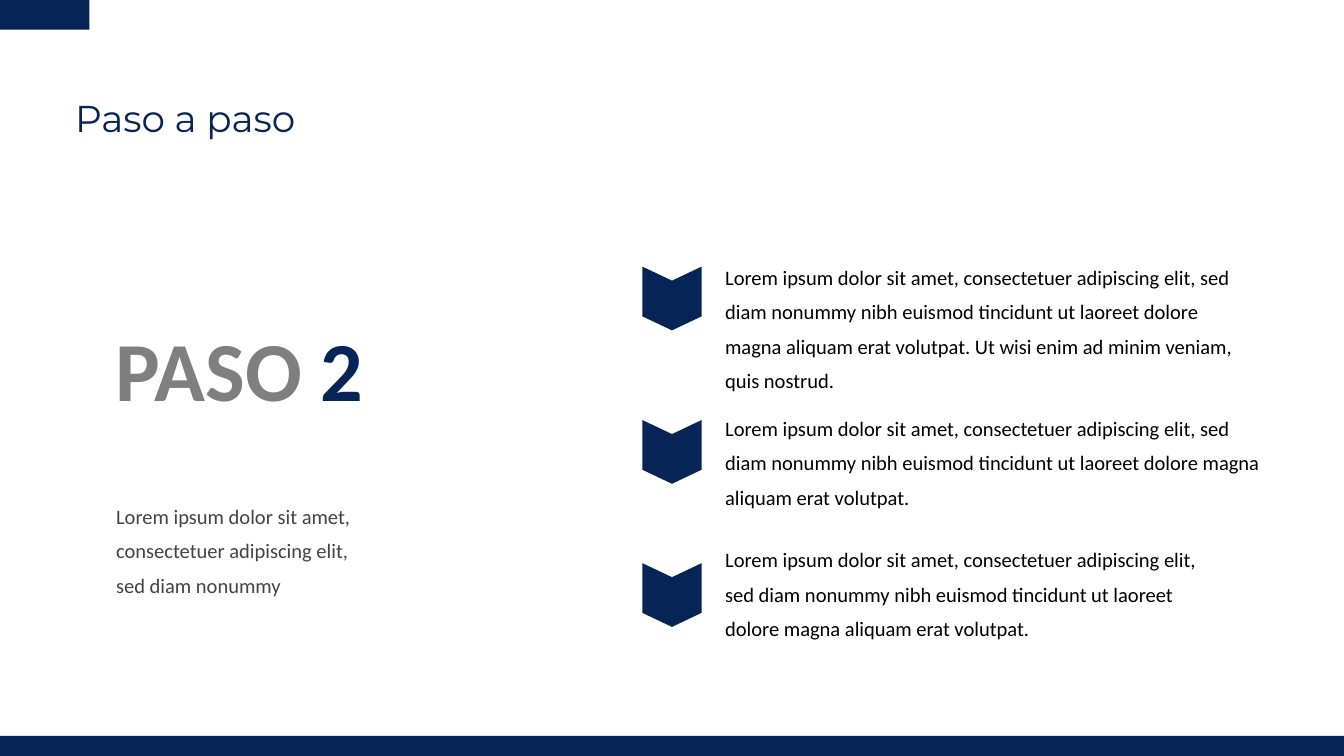
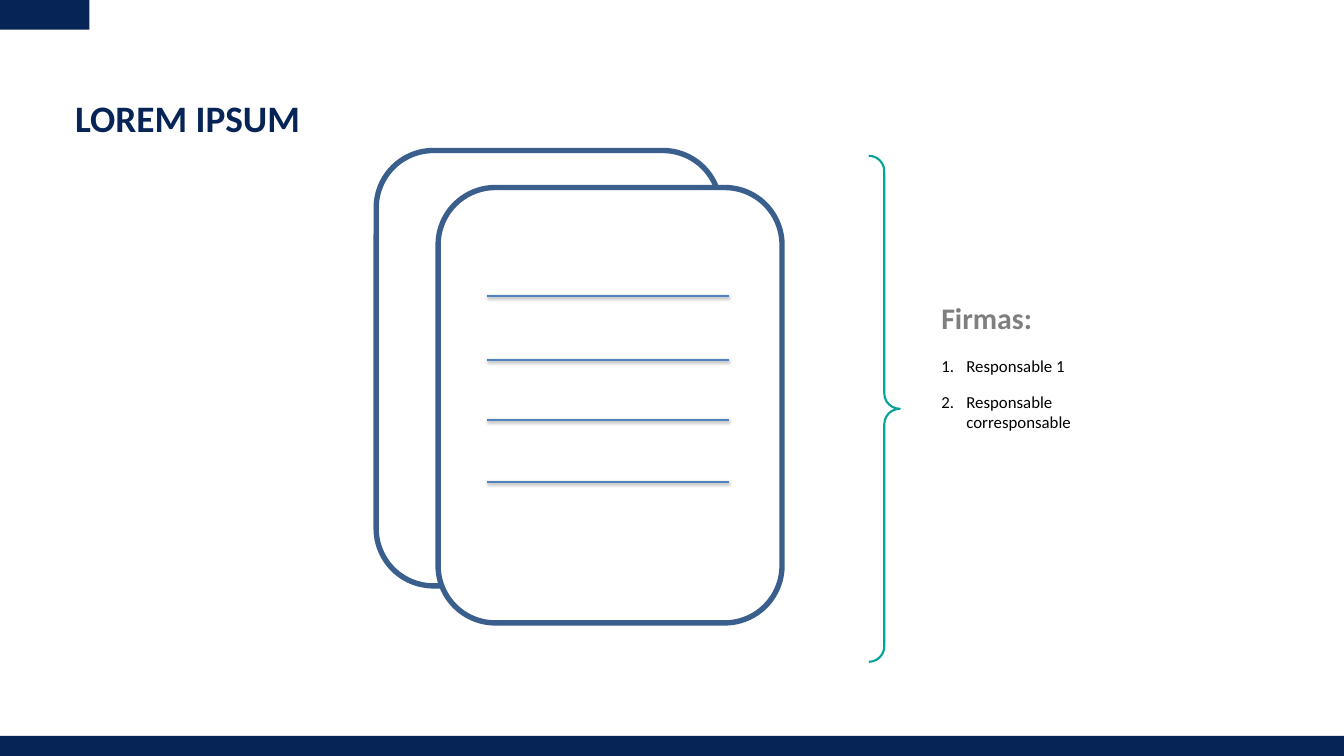
"""Build two slides of a process template: a step in detail and a signature sheet."""

from dataclasses import dataclass
from typing import Any, NamedTuple, Optional

from lxml.etree import SubElement
from pptx import Presentation
from pptx.dml.color import RGBColor
from pptx.enum.shapes import MSO_CONNECTOR, MSO_SHAPE
from pptx.enum.text import MSO_AUTO_SIZE, PP_ALIGN
from pptx.oxml.ns import qn
from pptx.util import Cm, Pt


@dataclass(frozen=True)
class Theme:
    navy: RGBColor = RGBColor(0x07, 0x24, 0x56)
    steel: RGBColor = RGBColor(0x3A, 0x5F, 0x8C)
    blue: RGBColor = RGBColor(0x4F, 0x81, 0xBD)
    teal: RGBColor = RGBColor(0x03, 0xA2, 0x9B)
    grey: RGBColor = RGBColor(0x7F, 0x7F, 0x7F)
    charcoal: RGBColor = RGBColor(0x43, 0x43, 0x43)
    black: RGBColor = RGBColor(0, 0, 0)
    white: RGBColor = RGBColor(0xFF, 0xFF, 0xFF)
    body_font: str = "Calibri"
    title_font: str = "Montserrat"
    step_size: int = 90
    title_size: int = 40
    heading_size: int = 32
    body_size: int = 22
    list_size: int = 18


THEME = Theme()
SLIDE_WIDTH, SLIDE_HEIGHT = 50.8, 28.58
BAND_TOP = 27.82


class Box(NamedTuple):
    left: float
    top: float
    width: float
    height: float

    def lengths(self) -> list[Cm]:
        return [Cm(value) for value in self]


@dataclass(frozen=True)
class Words:
    text: str
    size: int
    color: RGBColor
    bold: bool = False
    font: str = THEME.body_font


@dataclass(frozen=True)
class Step:
    chevron_top: float
    box: Box
    text: str


@dataclass(frozen=True)
class Signer:
    role: str
    space_before: int


LOREM = "Lorem ipsum dolor sit amet, consectetuer adipiscing elit, sed diam nonummy"
LOREM_LONG = f"{LOREM} nibh euismod tincidunt ut laoreet dolore magna aliquam erat volutpat."
STEPS = [
    Step(10.08, Box(27.41, 9.63, 19.63, 4.9), f"{LOREM_LONG} Ut wisi enim ad minim veniam, quis nostrud."),
    Step(15.88, Box(27.41, 15.34, 20.52, 3.58), LOREM_LONG),
    Step(21.29, Box(27.41, 20.32, 18.77, 3.58), LOREM_LONG),
]
SIGNERS = [Signer("Responsable 1", 22), Signer("Responsable corresponsable", 17)]
SHEETS = [(Box(14.22, 5.69, 13, 16.46), None), (Box(16.56, 7.09, 13, 16.46), THEME.white)]
RULE_TOPS = [11.18, 13.61, 15.88, 18.21]
RULE_LEFT, RULE_RIGHT = 18.42, 27.56
CHEVRON_LEFT, CHEVRON_WIDTH, CHEVRON_HEIGHT, CHEVRON_NOTCH = 24.28, 2.24, 2.41, 0.53


def apply_format(target: Any, values: dict[str, Any]) -> None:
    """Set every format value on the target."""
    for attribute, value in values.items():
        setattr(target, attribute, value)


def paint(shape: Any, fill: Optional[RGBColor] = None, line: Optional[RGBColor] = None, width: float = 0) -> None:
    """Give a shape its fill and outline, without shadow."""
    shape.shadow.inherit = False
    if fill is None:
        shape.fill.background()
    else:
        shape.fill.solid()
        shape.fill.fore_color.rgb = fill
    if line is None:
        shape.line.fill.background()
    else:
        shape.line.color.rgb = line
        shape.line.width = Pt(width)


def add_preset(slide: Any, kind: MSO_SHAPE, box: Box, **look: Any) -> Any:
    """Draw a preset shape with the given look."""
    shape = slide.shapes.add_shape(kind, *box.lengths())
    paint(shape, **look)
    return shape


def add_frame(slide: Any, box: Box, side: float = 0, edge: float = 0) -> Any:
    """Add a wrapping text frame that grows with its text."""
    frame = slide.shapes.add_textbox(*box.lengths()).text_frame
    apply_format(frame, {
        "word_wrap": True, "auto_size": MSO_AUTO_SIZE.SHAPE_TO_FIT_TEXT,
        "margin_left": Cm(side), "margin_right": Cm(side),
        "margin_top": Cm(edge), "margin_bottom": Cm(edge),
    })
    return frame


def write(paragraph: Any, *parts: Words) -> None:
    """Write the parts as runs of one paragraph."""
    for words in parts:
        run = paragraph.add_run()
        run.text = words.text
        apply_format(run.font, {"name": words.font, "size": Pt(words.size), "bold": words.bold})
        run.font.color.rgb = words.color


def add_text(slide: Any, box: Box, *parts: Words, spacing: float = 1.4, align: PP_ALIGN = PP_ALIGN.LEFT) -> None:
    """Add a one-paragraph text without margins."""
    paragraph = add_frame(slide, box).paragraphs[0]
    apply_format(paragraph, {"line_spacing": spacing, "alignment": align})
    write(paragraph, *parts)


def add_number(paragraph: Any) -> None:
    """Number a paragraph with a hanging indent."""
    properties = paragraph._p.get_or_add_pPr()
    properties.set("marL", str(Cm(0.95)))
    properties.set("indent", str(-Cm(0.95)))
    color = SubElement(properties, qn("a:buClr"))
    SubElement(color, qn("a:srgbClr"), val=str(THEME.black))
    SubElement(properties, qn("a:buAutoNum"), type="arabicPeriod")


def add_chevron(slide: Any, top: float) -> None:
    """Draw a chevron that points down."""
    right, middle = CHEVRON_LEFT + CHEVRON_WIDTH, CHEVRON_LEFT + CHEVRON_WIDTH / 2
    bottom = top + CHEVRON_HEIGHT
    outline = [
        (CHEVRON_LEFT, top), (middle, top + CHEVRON_NOTCH), (right, top),
        (right, bottom - CHEVRON_NOTCH), (middle, bottom), (CHEVRON_LEFT, bottom - CHEVRON_NOTCH),
    ]
    start, *corners = [(Cm(x), Cm(y)) for x, y in outline]
    builder = slide.shapes.build_freeform(*start)
    builder.add_line_segments(corners, close=True)
    paint(builder.convert_to_shape(), fill=THEME.navy)


def add_signature_rule(slide: Any, top: float) -> None:
    """Draw a hairline with a soft shadow below."""
    rule = slide.shapes.add_connector(MSO_CONNECTOR.STRAIGHT, Cm(RULE_LEFT), Cm(top), Cm(RULE_RIGHT), Cm(top))
    rule.line.color.rgb = THEME.blue
    rule.line.width = Pt(0)
    effects = SubElement(rule._element.spPr, qn("a:effectLst"))
    shadow = SubElement(effects, qn("a:outerShdw"), blurRad="40000", dist="20000", dir="5400000", rotWithShape="0")
    color = SubElement(shadow, qn("a:srgbClr"), val=str(THEME.black))
    SubElement(color, qn("a:alpha"), val="38000")


def add_base_slide(deck: Any, title: Words, title_width: float) -> Any:
    """Add a slide with its title, corner block and footer band."""
    slide = deck.slides.add_slide(deck.slide_layouts[6])
    for box in (Box(0, 0, 3.38, 1.12), Box(0, BAND_TOP, SLIDE_WIDTH, SLIDE_HEIGHT - BAND_TOP)):
        add_preset(slide, MSO_SHAPE.RECTANGLE, box, fill=THEME.navy)
    add_text(slide, Box(2.84, 3.25, title_width, 2.06), title, spacing=1.21)
    return slide


def build_step_slide(deck: Any) -> None:
    """Build the slide that explains one step."""
    title = Words("Paso a paso", THEME.title_size, THEME.navy, font=THEME.title_font)
    slide = add_base_slide(deck, title, 42.01)
    add_text(
        slide, Box(3.38, 10.49, 11.35, 5.38),
        Words("PASO ", THEME.step_size, THEME.grey, True), Words("2", THEME.step_size, THEME.navy, True),
        align=PP_ALIGN.CENTER,
    )
    add_text(slide, Box(4.39, 18.67, 8.89, 3.58), Words(LOREM, THEME.body_size, THEME.charcoal))
    for step in STEPS:
        add_chevron(slide, step.chevron_top)
        add_text(slide, step.box, Words(step.text, THEME.body_size, THEME.black))


def build_signature_slide(deck: Any) -> None:
    """Build the slide with the sheets and their signers."""
    slide = add_base_slide(deck, Words("LOREM IPSUM", THEME.title_size, THEME.navy, True), 25.93)
    signatures = add_frame(slide, Box(35.33, 11.18, 5.56, 5.31), side=0.25, edge=0.13)
    write(signatures.paragraphs[0], Words("Firmas:", THEME.heading_size, THEME.grey, True))
    for signer in SIGNERS:
        paragraph = signatures.add_paragraph()
        add_number(paragraph)
        paragraph.space_before = Pt(signer.space_before)
        write(paragraph, Words(signer.role, THEME.list_size, THEME.black))
    brace = add_preset(slide, MSO_SHAPE.RIGHT_BRACE, Box(32.84, 5.89, 1.17, 19.13), line=THEME.teal, width=2.25)
    brace.adjustments[0], brace.adjustments[1] = 0.5, 0.5
    for box, fill in SHEETS:
        add_preset(slide, MSO_SHAPE.ROUNDED_RECTANGLE, box, fill=fill, line=THEME.steel, width=5.75)
    for top in RULE_TOPS:
        add_signature_rule(slide, top)


def main() -> None:
    """Build and save the deck."""
    deck = Presentation()
    apply_format(deck, {"slide_width": Cm(SLIDE_WIDTH), "slide_height": Cm(SLIDE_HEIGHT)})
    build_step_slide(deck)
    build_signature_slide(deck)
    deck.save("out.pptx")


if __name__ == "__main__":
    main()
